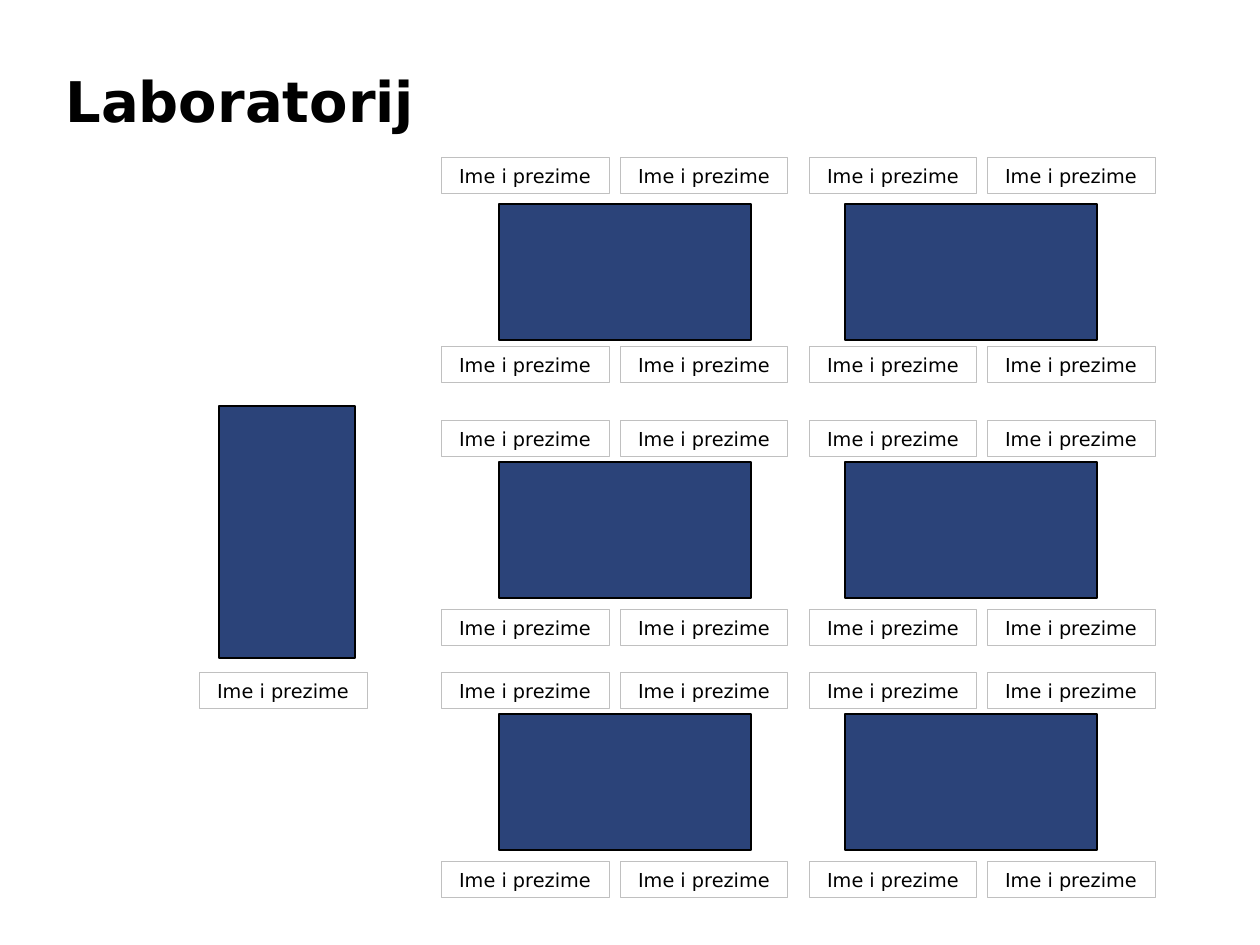
from pptx import Presentation
from pptx.dml.color import RGBColor
from pptx.enum.shapes import MSO_SHAPE as Shape
from pptx.enum.text import MSO_ANCHOR as Anchor, MSO_AUTO_SIZE as AutoSize, PP_ALIGN as Align
from pptx.util import Emu, Pt

EMU_PER_PX = 914400 / 126
COLORS = {"text": "000000", "table": "2B4379", "edge": "000000",
          "card": "FFFFFF", "card_edge": "C0C0C0"}
FONT = "DejaVu Sans"

TABLE_W, TABLE_H = 252, 136
CARD_W, CARD_H = 168, 37
NAME = "Ime i prezime"

# Left edge of the table and of the two seats on each of its sides
COLUMNS = [(499, (441, 620)), (845, (809, 987))]
# Top of the upper seats and of the table
ROWS = [(157, 204), (420, 462), (672, 714)]
SEAT_STEP = 189


def px(n):
    return Emu(round(n * EMU_PER_PX))


def color(name):
    return RGBColor.from_string(COLORS[name])


class RoomPlan:
    def __init__(self, prs):
        self.s = prs.slides.add_slide(prs.slide_layouts[6])

    def set_text(self, tf, text, size, align, bold=False):
        tf.word_wrap = True
        tf.vertical_anchor = Anchor.MIDDLE
        p = tf.paragraphs[0]
        p.text = text
        p.alignment = align
        p.font.name, p.font.size, p.font.bold = FONT, Pt(size), bold
        p.font.color.rgb = color("text")

    def title(self, text, x, y, w, h):
        tb = self.s.shapes.add_textbox(px(x), px(y), px(w), px(h))
        self.set_text(tb.text_frame, text, 32, Align.LEFT, bold=True)

    def box(self, x, y, w, h, fill, edge, width):
        sp = self.s.shapes.add_shape(Shape.RECTANGLE, px(x), px(y), px(w), px(h))
        sp.shadow.inherit = False
        sp.fill.solid()
        sp.fill.fore_color.rgb = color(fill)
        sp.line.color.rgb = color(edge)
        sp.line.width = Pt(width)
        return sp

    def table(self, x, y, rotation=0):
        sp = self.box(x, y, TABLE_W, TABLE_H, "table", "edge", 0.75)
        sp.rotation = rotation

    def name_card(self, x, y):
        sp = self.box(x, y, CARD_W, CARD_H, "card", "card_edge", 0.5)
        self.set_text(sp.text_frame, NAME, 11, Align.CENTER)
        sp.text_frame.auto_size = AutoSize.SHAPE_TO_FIT_TEXT


def main():
    prs = Presentation()
    prs.slide_width, prs.slide_height = px(1260), px(945)
    plan = RoomPlan(prs)
    plan.title("Laboratorij", 53, 53, 1155, 95)

    plan.table(161, 464, rotation=270)
    plan.name_card(199, 672)

    for table_x, seat_xs in COLUMNS:
        for seat_y, table_y in ROWS:
            plan.table(table_x, table_y)
            for x in seat_xs:
                plan.name_card(x, seat_y)
                plan.name_card(x, seat_y + SEAT_STEP)

    prs.save("out.pptx")


if __name__ == "__main__":
    main()
